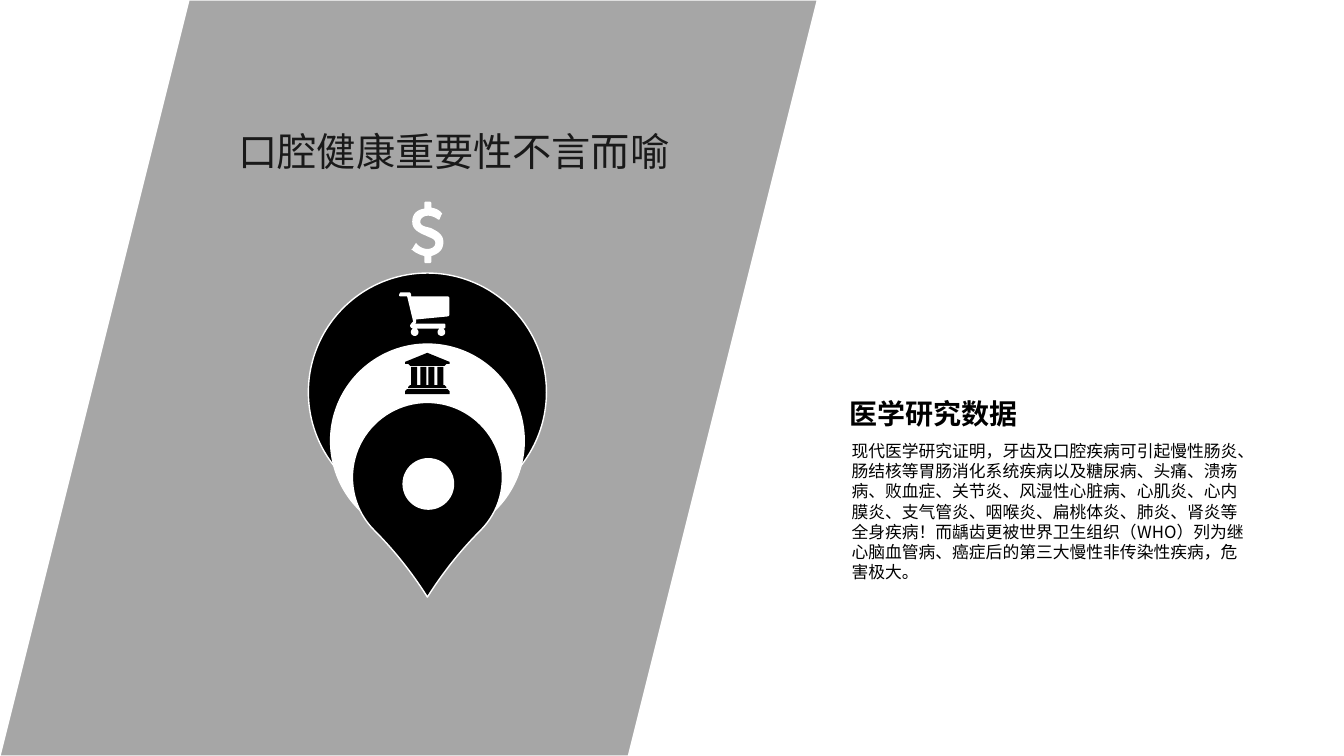
from dataclasses import dataclass
from math import cos, pi, sin

from lxml.etree import SubElement
from pptx import Presentation
from pptx.dml.color import RGBColor as Rgb
from pptx.enum.shapes import MSO_SHAPE as Preset
from pptx.enum.text import MSO_AUTO_SIZE as AutoSize, PP_ALIGN as Align
from pptx.oxml.ns import qn
from pptx.util import Cm, Pt


@dataclass(frozen=True)
class Theme:
    """Colours, type sizes and font of the slide."""
    black: Rgb = Rgb(0, 0, 0)
    white: Rgb = Rgb(255, 255, 255)
    panel: Rgb = Rgb(0xA6, 0xA6, 0xA6)
    title: Rgb = Rgb(0x19, 0x19, 0x19)
    title_size: int = 28
    heading_size: int = 20
    body_size: int = 12
    font: str = "Noto Sans CJK SC"


def flatten(contour, steps=8):
    """Turn points and cubic curves (six numbers) into a list of points."""
    points = []
    for part in contour:
        if len(part) == 2:
            points.append(part)
            continue
        x0, y0 = points[-1]
        x1, y1, x2, y2, x3, y3 = part
        for step in range(1, steps + 1):
            t = step / steps
            u = 1 - t
            points.append(tuple(
                u**3 * a + 3 * u * u * t * b + 3 * u * t * t * c + t**3 * d
                for a, b, c, d in ((x0, x1, x2, x3), (y0, y1, y2, y3))))
    return points


def wheel(x, y, radius=3.8, sides=20):
    """Return the outline of a wheel."""
    return [(x + radius * cos(2 * pi * i / sides), y + radius * sin(2 * pi * i / sides))
            for i in range(sides)]


class SlideBuilder:
    """Draws styled elements on one slide."""

    def __init__(self, slide, theme):
        self.shapes = slide.shapes
        self.theme = theme

    def preset(self, kind, left, top, width, height, fill):
        """Add a preset shape with a thin white outline."""
        shape = self.shapes.add_shape(kind, Cm(left), Cm(top), Cm(width), Cm(height))
        shape.shadow.inherit = False
        shape.fill.solid()
        shape.fill.fore_color.rgb = fill
        shape.line.color.rgb = self.theme.white
        shape.line.width = Pt(1)
        return shape

    def drop(self, centre, top, size, fill):
        """Add a teardrop that points down."""
        drop = self.preset(Preset.TEAR, centre - size / 2, top, size, size, fill)
        drop.adjustments[0] = 1.128
        drop.rotation = 135

    def icon(self, contours, fill):
        """Add a filled icon from outlines in units of 0.0254 cm."""
        fine = 100
        outlines = [[(x * fine, y * fine) for x, y in flatten(contour)]
                    for contour in contours]
        builder = self.shapes.build_freeform(*outlines[0][0], scale=Cm(0.0254) / fine)
        for outline in outlines:
            if outline is not outlines[0]:
                builder.move_to(*outline[0])
            builder.add_line_segments(outline[1:], close=True)
        icon = builder.convert_to_shape()
        icon.shadow.inherit = False
        icon.fill.solid()
        icon.fill.fore_color.rgb = fill
        icon.line.fill.background()

    def text(self, wording, left, top, width, height, size, color,
             bold=False, align=Align.LEFT, wrap=True, inset=(0, 0)):
        """Add a text box with one paragraph."""
        box = self.shapes.add_textbox(Cm(left), Cm(top), Cm(width), Cm(height))
        frame = box.text_frame
        frame.word_wrap = wrap
        frame.auto_size = AutoSize.SHAPE_TO_FIT_TEXT
        frame.margin_left = frame.margin_right = Cm(inset[0])
        frame.margin_top = frame.margin_bottom = Cm(inset[1])
        paragraph = frame.paragraphs[0]
        paragraph.text = wording
        paragraph.alignment = align
        font = paragraph.font
        font.size = Pt(size)
        font.bold = bold
        font.color.rgb = color
        font.name = self.theme.font
        defaults = paragraph._p.pPr.find(qn("a:defRPr"))
        SubElement(defaults, qn("a:ea")).set("typeface", self.theme.font)


DOLLAR = [[
    (428, 254), (428, 260), (427, 261), (422, 261), (421, 260), (421, 254),
    (413, 252, 409, 248, 409, 248), (408, 248, 408, 247, 409, 247), (412, 242),
    (413, 241), (413, 242, 418, 247, 424, 247), (428, 247, 432, 245, 432, 241),
    (432, 237, 427, 236, 423, 234), (416, 231, 409, 228, 409, 220),
    (409, 213, 413, 208, 421, 207), (421, 201), (422, 200), (427, 200), (428, 201),
    (428, 206), (435, 207, 438, 211, 438, 211), (439, 212, 439, 212, 438, 213),
    (436, 218), (435, 218), (435, 218, 430, 214, 425, 214),
    (420, 214, 417, 217, 417, 220), (417, 224, 422, 225, 427, 226),
    (433, 229, 440, 232, 440, 240), (440, 248, 435, 252, 428, 254)]]

CART = [
    [(446, 312), (446, 313, 445, 314, 444, 314), (413, 317), (413, 320), (412, 321),
     (440, 321), (442, 321, 442, 322, 442, 323), (442, 325, 442, 326, 440, 326),
     (410, 326), (409, 326, 407, 325, 407, 323), (407, 322, 409, 320, 410, 319),
     (404, 294), (398, 294), (397, 294, 396, 294, 396, 293),
     (396, 292, 397, 290, 398, 290), (406, 290), (408, 290, 408, 293, 408, 294),
     (444, 294), (445, 294, 446, 295, 446, 296)],
    wheel(411.5, 329.5), wheel(438, 329.5)]

COLUMNS = [point for x in (408, 417, 425, 434)
           for point in ((x, 382), (x, 364), (x + 6, 364), (x + 6, 382))]
BANK = [
    [(446, 359), (446, 361), (443, 361), (441, 363), (407, 363), (405, 361),
     (402, 361), (402, 359), (424, 350)],
    [(446, 388), (446, 391), (402, 391), (402, 388), (404, 386), (444, 386)],
    COLUMNS + [(441, 382), (443, 384), (443, 385), (405, 385), (405, 384), (407, 382)]]

BODY = ("现代医学研究证明，牙齿及口腔疾病可引起慢性肠炎、肠结核等胃肠消化系统疾病以及糖尿病、"
        "头痛、溃疡病、败血症、关节炎、风湿性心脏病、心肌炎、心内膜炎、支气管炎、咽喉炎、"
        "扁桃体炎、肺炎、肾炎等全身疾病！而龋齿更被世界卫生组织（WHO）列为继心脑血管病、"
        "癌症后的第三大慢性非传染性疾病，危害极大。")


def main():
    """Build the slide and save it."""
    theme = Theme()
    deck = Presentation()
    deck.slide_width, deck.slide_height = Cm(33.87), Cm(19.05)
    page = SlideBuilder(deck.slides.add_slide(deck.slide_layouts[6]), theme)

    page.preset(Preset.PARALLELOGRAM, 0, 0, 20.6, 19.05, theme.panel)
    for top, size, fill in ((6.88, 6, theme.black), (8.67, 4.88, theme.white),
                            (10.14, 3.78, theme.black)):
        page.drop(10.77, top, size, fill)
    for contours, fill in ((DOLLAR, theme.white), (BANK, theme.black),
                           (CART, theme.white)):
        page.icon(contours, fill)
    page.preset(Preset.OVAL, 10.16, 11.56, 1.27, 1.27, theme.white)

    page.text(BODY, 21.46, 11.11, 10.03, 3.58, theme.body_size, theme.black)
    page.text("医学研究数据", 21.41, 9.99, 4.27, 0.86, theme.heading_size, theme.black,
              bold=True, wrap=False)
    page.text("口腔健康重要性不言而喻", 3.39, 3.07, 16.1, 1.45, theme.title_size,
              theme.title, align=Align.CENTER, inset=(0.25, 0.13))
    deck.save("out.pptx")


if __name__ == "__main__":
    main()
